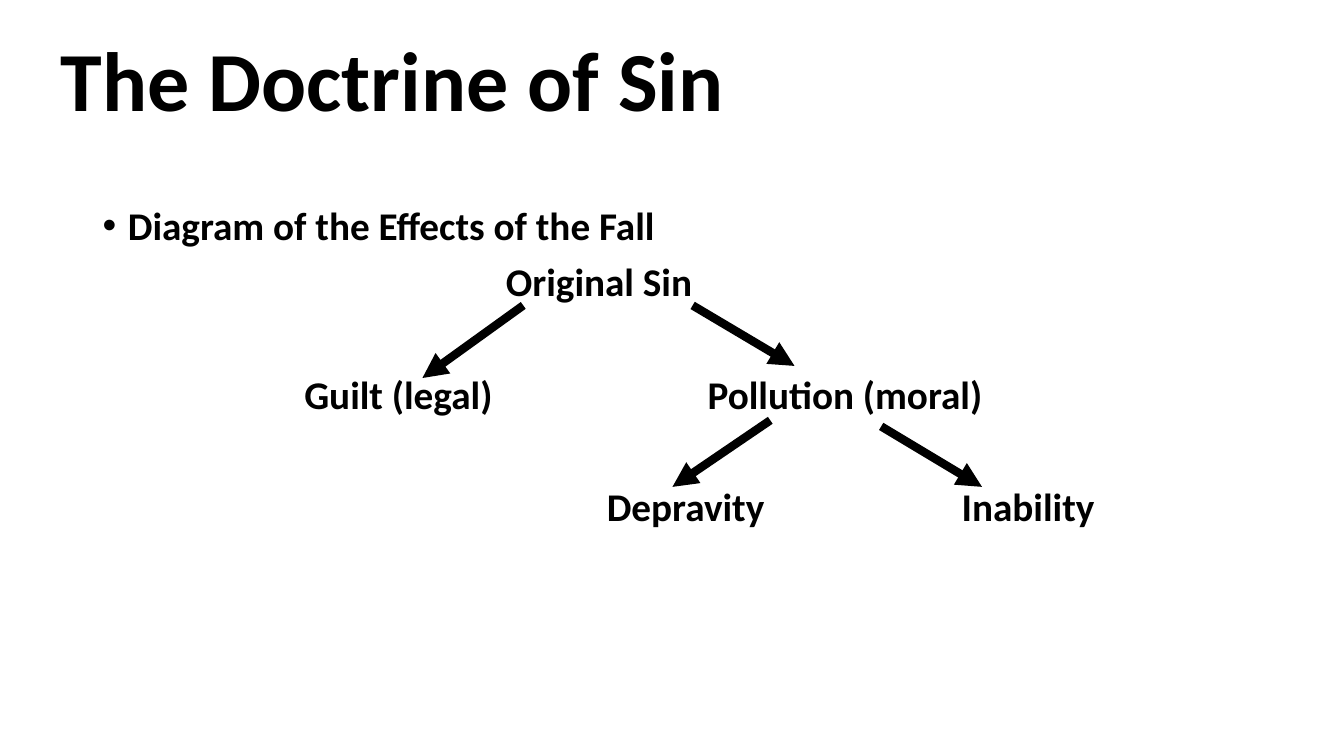
from dataclasses import dataclass

from lxml.etree import SubElement
from pptx import Presentation
from pptx.dml.color import RGBColor
from pptx.enum.shapes import MSO_CONNECTOR
from pptx.enum.text import MSO_ANCHOR, PP_ALIGN
from pptx.oxml.ns import qn
from pptx.util import Inches, Pt

COLORS = {"ink": "000000", "background": "FFFFFF"}
FONT = "Calibri"


@dataclass(frozen=True)
class Line:
    """One line of the outline; each label starts at its own tab stop."""
    labels: tuple[str, ...]
    stops: tuple[float, ...] = ()
    before: float = 10


@dataclass(frozen=True)
class Arrow:
    start: tuple[float, float]
    end: tuple[float, float]


LINES = [
    Line(("Diagram of the Effects of the Fall",)),
    Line(("Original Sin",), (4,)),
    Line(("Guilt (legal)", "Pollution (moral)"), (2, 6), 50),
    Line(("Depravity", "Inability"), (5, 8.52), 50),
]

ARROWS = [
    Arrow((5.19, 3.03), (4.19, 3.75)),
    Arrow((6.87, 3.03), (7.88, 3.63)),
    Arrow((8.74, 4.23), (9.74, 4.83)),
    Arrow((7.64, 4.17), (6.67, 4.83)),
]


def add_box(s, left: float, top: float, width: float, height: float):
    tf = s.shapes.add_textbox(*map(Inches, (left, top, width, height))).text_frame
    tf.word_wrap = True
    return tf


def write(p, text: str, size: float) -> None:
    p.text = text
    p.line_spacing = 0.9
    for r in p.runs:
        r.font.name = FONT
        r.font.size = Pt(size)
        r.font.bold = True
        r.font.color.rgb = RGBColor.from_string(COLORS["ink"])


def add_bullet(p) -> None:
    pPr = p._p.get_or_add_pPr()
    pPr.set("marL", str(Inches(0.25)))
    pPr.set("indent", str(Inches(-0.25)))
    SubElement(pPr, qn("a:buFont"), typeface="Arial")
    SubElement(pPr, qn("a:buChar"), char="•")


def add_tab_stops(p, stops: tuple[float, ...]) -> None:
    tabs = SubElement(p._p.get_or_add_pPr(), qn("a:tabLst"))
    for stop in stops:
        SubElement(tabs, qn("a:tab"), pos=str(Inches(stop)), algn="l")


def add_outline(s) -> None:
    tf = add_box(s, 0.92, 2, 11.5, 4.76)
    for i, line in enumerate(LINES):
        p = tf.add_paragraph() if i else tf.paragraphs[0]
        lead = "\t" if line.stops else ""
        write(p, lead + "\t".join(line.labels), 28)
        p.space_before = Pt(line.before)
        if line.stops:
            add_tab_stops(p, line.stops)
        else:
            add_bullet(p)


def add_arrow(s, arrow: Arrow) -> None:
    c = s.shapes.add_connector(
        MSO_CONNECTOR.STRAIGHT, *map(Inches, arrow.start + arrow.end))
    c.line.color.rgb = RGBColor.from_string(COLORS["ink"])
    c.line.width = Pt(6)
    SubElement(c.line._get_or_add_ln(), qn("a:tailEnd"), type="triangle")
    SubElement(c._element.spPr, qn("a:effectLst"))


def add_title(s) -> None:
    tf = add_box(s, 0, 0, 7.78, 1.34)
    tf.vertical_anchor = MSO_ANCHOR.BOTTOM
    p = tf.paragraphs[0]
    write(p, "The Doctrine of Sin", 60)
    p.alignment = PP_ALIGN.CENTER


def main() -> None:
    prs = Presentation()
    prs.slide_width, prs.slide_height = Inches(13.33), Inches(7.5)
    s = prs.slides.add_slide(prs.slide_layouts[6])
    s.background.fill.solid()
    s.background.fill.fore_color.rgb = RGBColor.from_string(COLORS["background"])
    add_outline(s)
    for arrow in ARROWS:
        add_arrow(s, arrow)
    add_title(s)
    prs.save("out.pptx")


if __name__ == "__main__":
    main()
